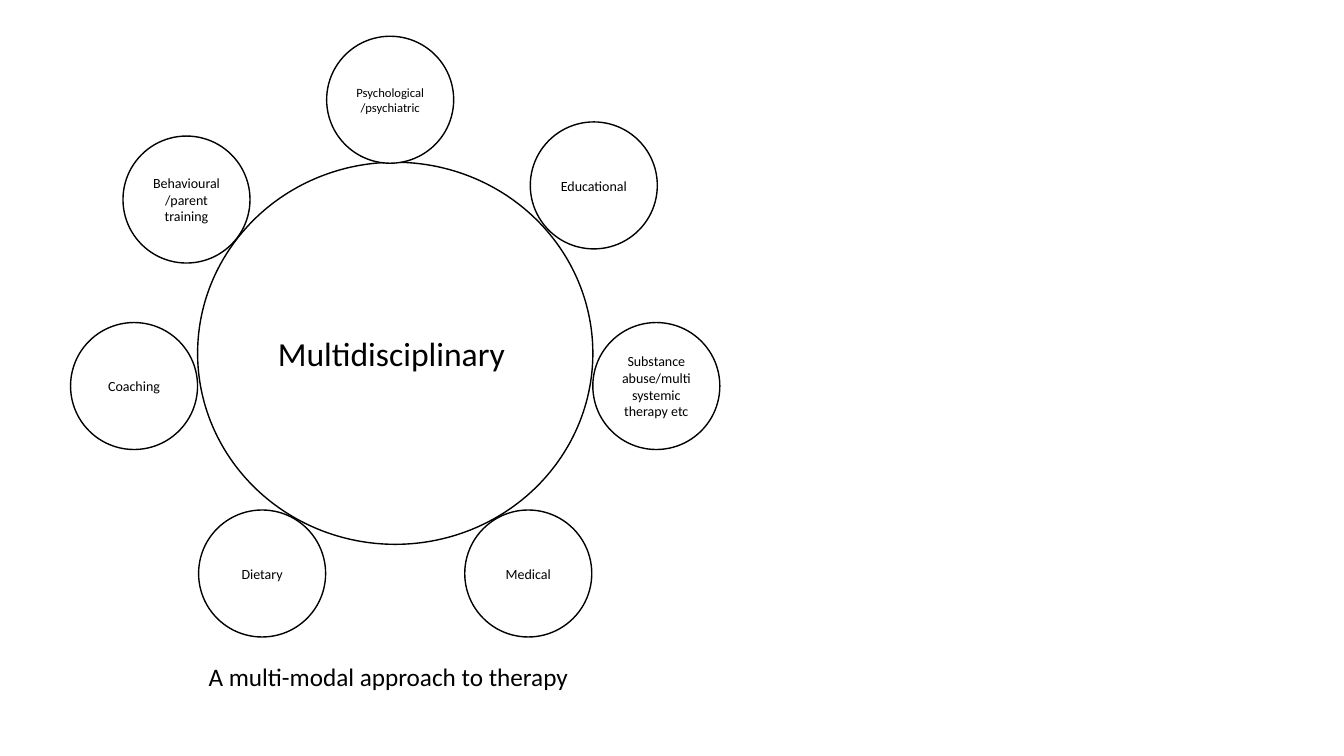
from pptx import Presentation
from pptx.dml.color import RGBColor
from pptx.enum.shapes import MSO_SHAPE
from pptx.enum.text import MSO_ANCHOR, PP_ALIGN
from pptx.util import Emu, Pt

PX = 9144  # 100 px to the inch
BLACK = RGBColor(0x00, 0x00, 0x00)
WHITE = RGBColor(0xFF, 0xFF, 0xFF)
FONT = "Calibri"
SMALL = 126  # diameter of the outer circles

OUTER = [
    ("Psychological/psychiatric", 324, 36, 9),
    ("Educational", 526, 121, 10),
    ("Coaching", 70, 320, 10),
    ("Dietary", 197, 506, 10),
    ("Substance abuse/multisystemic therapy etc", 588, 320, 10),
    ("Medical", 461, 506, 10),
    ("Behavioural/parent training", 122, 135, 10),
]


def write(tf, text, size):
    tf.word_wrap = True
    tf.text = text
    font = tf.paragraphs[0].runs[0].font
    font.name = FONT
    font.size = Pt(size)
    font.color.rgb = BLACK


def add_circle(text, x, y, w, h, size):
    sp = slide.shapes.add_shape(
        MSO_SHAPE.FLOWCHART_CONNECTOR, *(Emu(v * PX) for v in (x, y, w, h)))
    sp.shadow.inherit = False
    sp.fill.solid()
    sp.fill.fore_color.rgb = WHITE
    sp.line.color.rgb = BLACK
    sp.line.width = Pt(1)
    tf = sp.text_frame
    write(tf, text, size)
    tf.vertical_anchor = MSO_ANCHOR.MIDDLE
    tf.paragraphs[0].alignment = PP_ALIGN.CENTER


prs = Presentation()
prs.slide_width = Emu(1333 * PX)
prs.slide_height = Emu(750 * PX)
slide = prs.slides.add_slide(prs.slide_layouts[6])

add_circle("Multidisciplinary ", 196, 161, 392, 379, 24)
for text, x, y, size in OUTER:
    add_circle(text, x, y, SMALL, SMALL, size)

caption = slide.shapes.add_textbox(*(Emu(v * PX) for v in (197, 651, 541, 40)))
write(caption.text_frame, "A multi-modal approach to therapy", 18)

prs.save("out.pptx")
